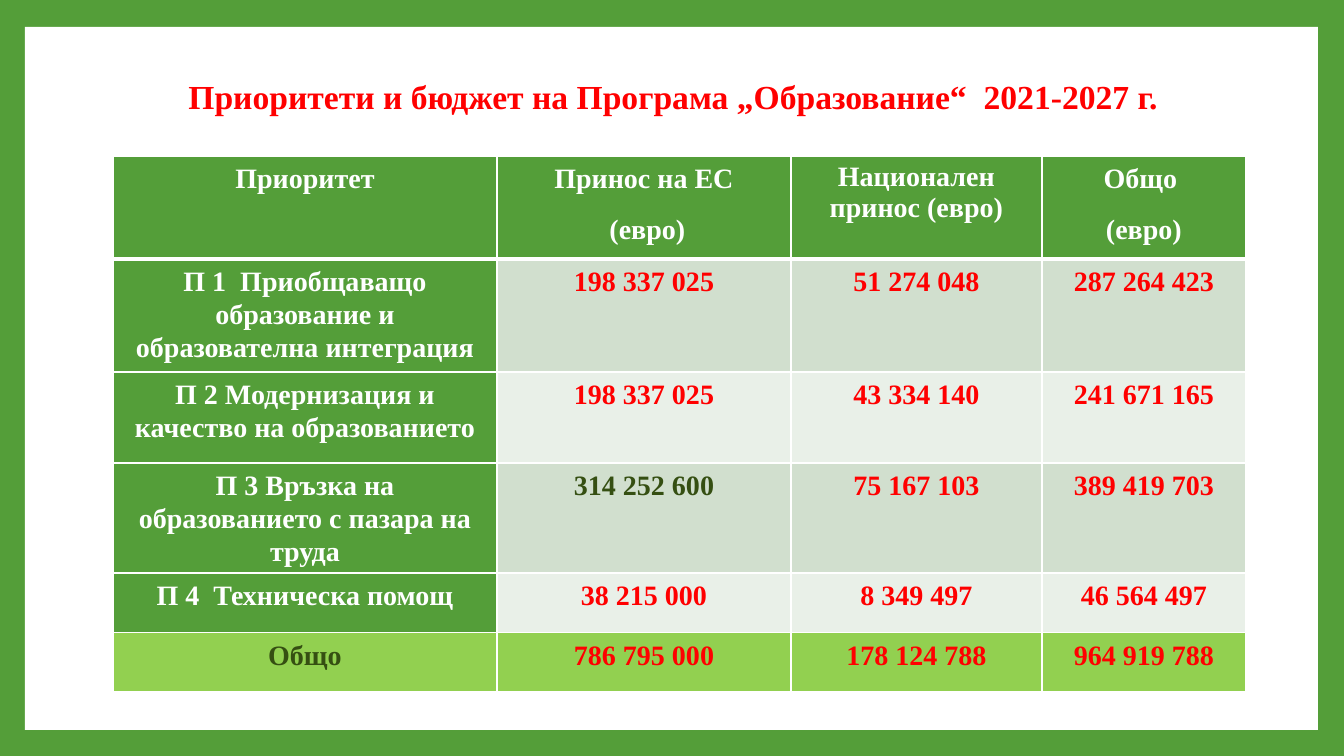
from lxml import etree
from pptx import Presentation
from pptx.dml.color import RGBColor
from pptx.enum.shapes import MSO_SHAPE as Shape
from pptx.enum.text import MSO_ANCHOR as Anchor, PP_ALIGN as Align
from pptx.oxml.ns import qn
from pptx.util import Emu, Pt

EMU_PER_PX = 914400 / 100.8
FONT = "Times New Roman"
COLORS = {
    "green": "549E39",
    "white": "FFFFFF",
    "red": "FF0000",
    "dark": "354F12",
    "band_dark": "D1DFCE",
    "band_light": "E9F0E8",
    "total": "92D050",
}

TITLE = "Приоритети и бюджет на Програма „Образование“  2021-2027 г."
COLUMN_WIDTHS = [384, 294, 251, 204]
ROW_HEIGHTS = [103, 113, 91, 110, 60, 59]
HEADER = ["Приоритет", "Принос на ЕС\n (евро)", "Национален принос (евро)", "Общо \n(евро)"]
PRIORITIES = [
    ["П 1  Приобщаващо образование и образователна интеграция",
     "198 337 025", "51 274 048", "287 264 423"],
    ["П 2 Модернизация и качество на образованието",
     "198 337 025", "43 334 140", "241 671 165"],
    ["П 3 Връзка на образованието с пазара на труда",
     "314 252 600", "75 167 103", "389 419 703"],
    ["П 4  Техническа помощ", "38 215 000", "8 349 497", "46 564 497"],
]
TOTAL = ["Общо", "786 795 000", "178 124 788", "964 919 788"]
ROWS = [HEADER, *PRIORITIES, TOTAL]
LAST_ROW = len(ROWS) - 1
NATIONAL_HEADER = (0, 2)
DARK_CELLS = {(3, 1), (LAST_ROW, 0)}


def px(length):
    return Emu(round(length * EMU_PER_PX))


def color(name):
    return RGBColor.from_string(COLORS[name])


def paint(fill, name):
    fill.solid()
    fill.fore_color.rgb = color(name)


def add_span(para, text, size, color_name):
    span = para.add_run()
    span.text = text
    span.font.name = FONT
    span.font.size = Pt(size)
    span.font.bold = True
    span.font.color.rgb = color(color_name)


def add_panel(page, box):
    panel = page.shapes.add_shape(Shape.RECTANGLE, *map(px, box))
    panel.shadow.inherit = False
    paint(panel.fill, "white")
    panel.line.fill.background()


def fill_title(page, box):
    title = page.shapes.title
    title.left, title.top, title.width, title.height = map(px, box)
    # The panel is drawn first, so the title goes above it.
    page.shapes.element.append(title.element)
    frame = title.text_frame
    frame.word_wrap = True
    frame.vertical_anchor = Anchor.MIDDLE
    para = frame.paragraphs[0]
    para.alignment = Align.CENTER
    para.line_spacing = 0.9
    add_span(para, TITLE, 24, "red")


def cell_colors(row, column):
    """Return the names of the fill and text colours of a cell."""
    if row == LAST_ROW:
        fill = "total"
    elif row == 0 or column == 0:
        fill = "green"
    else:
        fill = "band_dark" if row % 2 else "band_light"
    if (row, column) in DARK_CELLS:
        return fill, "dark"
    return fill, "white" if fill == "green" else "red"


def add_borders(cell, row):
    """Draw white cell borders, thicker under the header."""
    widths = {"lnL": 1, "lnR": 1, "lnT": 3 if row == 1 else 1, "lnB": 3 if row == 0 else 1}
    properties = cell._tc.get_or_add_tcPr()
    for index, (side, width) in enumerate(widths.items()):
        line = etree.Element(qn(f"a:{side}"), w=str(Pt(width)))
        solid = etree.SubElement(line, qn("a:solidFill"))
        etree.SubElement(solid, qn("a:srgbClr"), val=COLORS["white"])
        properties.insert(index, line)


def fill_cell(cell, text, row, column):
    fill, text_color = cell_colors(row, column)
    paint(cell.fill, fill)
    add_borders(cell, row)
    frame = cell.text_frame
    for index, line in enumerate(text.split("\n")):
        para = frame.add_paragraph() if index else frame.paragraphs[0]
        para.alignment = Align.CENTER
        para.line_spacing = 1.0 if (row, column) == NATIONAL_HEADER else 1.07
        para.space_before, para.space_after = Pt(5), Pt(8)
        add_span(para, line, 20, text_color)


def add_budget_table(page, left, top):
    box = left, top, sum(COLUMN_WIDTHS), sum(ROW_HEIGHTS)
    table = page.shapes.add_table(len(ROWS), len(HEADER), *map(px, box)).table
    for column, width in zip(table.columns, COLUMN_WIDTHS):
        column.width = px(width)
    for row, height in zip(table.rows, ROW_HEIGHTS):
        row.height = px(height)
    for row, texts in enumerate(ROWS):
        for column, text in enumerate(texts):
            fill_cell(table.cell(row, column), text, row, column)


def main():
    deck = Presentation()
    deck.slide_width, deck.slide_height = px(1344), px(756)
    page = deck.slides.add_slide(deck.slide_layouts[5])
    paint(page.background.fill, "green")
    add_panel(page, (25, 27, 1293, 703))
    fill_title(page, (57, 73, 1232, 52))
    add_budget_table(page, 113, 156)
    deck.save("out.pptx")


if __name__ == "__main__":
    main()
